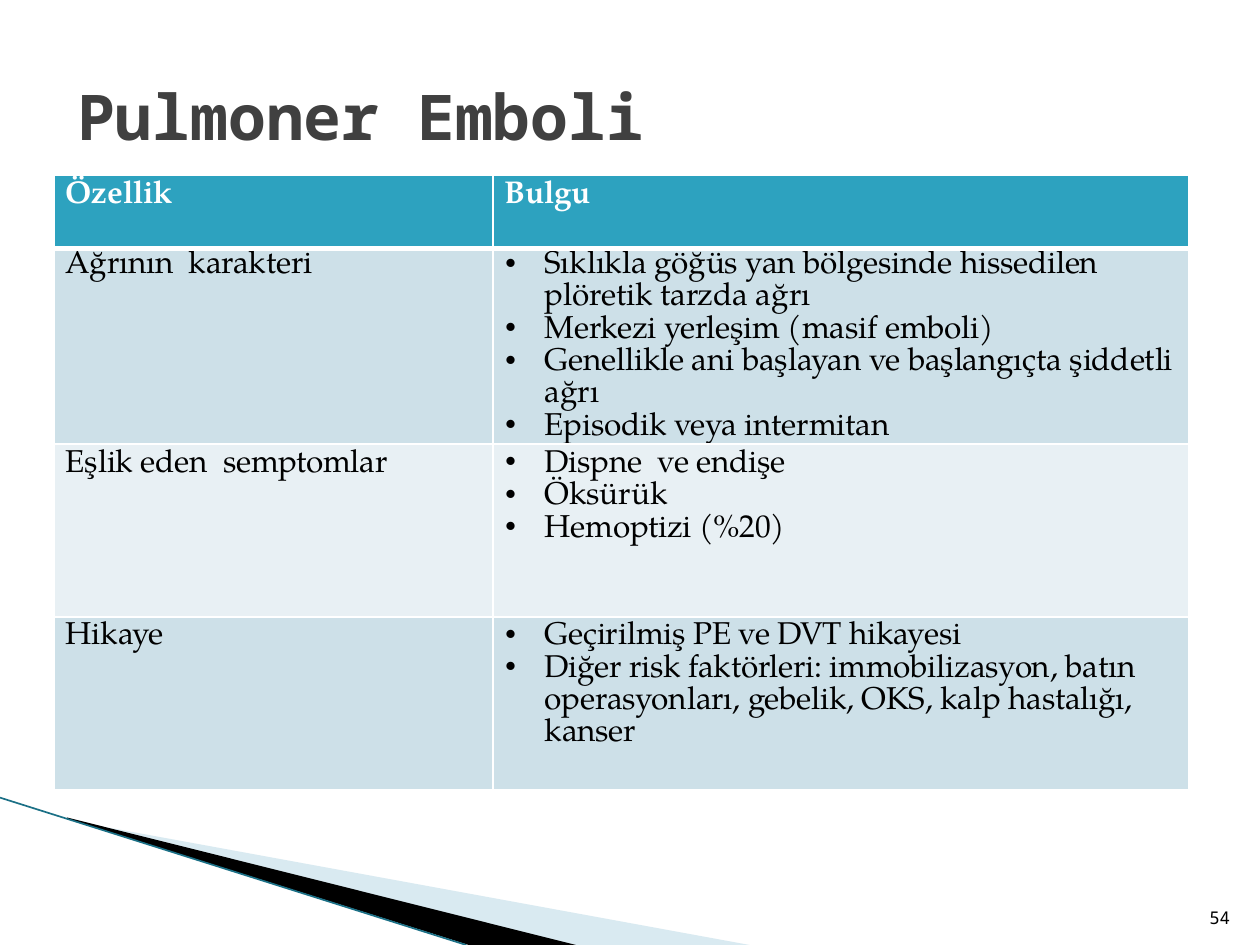
from lxml.etree import SubElement
from pptx import Presentation
from pptx.dml.color import RGBColor
from pptx.enum.shapes import MSO_CONNECTOR
from pptx.enum.text import MSO_ANCHOR, PP_ALIGN
from pptx.oxml.ns import qn
from pptx.util import Cm, Pt

SERIF = "TeX Gyre Pagella"
MONO = "Noto Sans Mono"
HEADER = ("Özellik", "Bulgu")
FINDINGS = [
    ("Ağrının  karakteri", [
        "Sıklıkla göğüs yan bölgesinde hissedilen plöretik tarzda ağrı",
        "Merkezi yerleşim (masif emboli)",
        "Genellikle ani başlayan ve başlangıçta şiddetli ağrı",
        "Episodik veya intermitan",
    ], 0.04),
    ("Eşlik eden  semptomlar", [
        "Dispne  ve endişe",
        "Öksürük",
        "Hemoptizi (%20)",
    ], 0.1),
    ("Hikaye", [
        "Geçirilmiş PE ve DVT hikayesi",
        "Diğer risk faktörleri: immobilizasyon, batın operasyonları, "
        "gebelik, OKS, kalp hastalığı, kanser",
    ], 0.1),
]


def rgb(color):
    return RGBColor.from_string(color)


def add_run(p, text, font=SERIF, size=18, color="000000", bold=False, spacing=None):
    r = p.add_run()
    r.text = text
    r.font.name = font
    r.font.size = Pt(size)
    r.font.bold = bold
    r.font.color.rgb = rgb(color)
    if spacing is not None:
        r._r.get_or_add_rPr().set("spc", str(spacing))


def add_wedge(s, points, color, alpha=None):
    start, *rest = [(Cm(x), Cm(y)) for x, y in points]
    builder = s.shapes.build_freeform(*start)
    builder.add_line_segments(rest, close=True)
    sp = builder.convert_to_shape()
    sp.shadow.inherit = False
    sp.line.fill.background()
    sp.fill.solid()
    sp.fill.fore_color.rgb = rgb(color)
    if alpha is not None:
        clr = sp._element.spPr.find(qn("a:solidFill"))[0]
        SubElement(clr, qn("a:alpha")).set("val", str(alpha * 1000))


def add_edge(s, x1, y1, x2, y2, color, width):
    line = s.shapes.add_connector(MSO_CONNECTOR.STRAIGHT, Cm(x1), Cm(y1), Cm(x2), Cm(y2))
    line.line.color.rgb = rgb(color)
    line.line.width = Pt(width)
    SubElement(line._element.spPr, qn("a:effectLst"))


def set_borders(cell, top=1, bottom=1):
    tcPr = cell._tc.get_or_add_tcPr()
    for side, width in (("L", 1), ("R", 1), ("T", top), ("B", bottom)):
        ln = SubElement(tcPr, qn(f"a:ln{side}"), w=str(Pt(width)))
        fill = SubElement(ln, qn("a:solidFill"))
        SubElement(fill, qn("a:srgbClr"), val="FFFFFF")


def fill_cell(cell, texts, fill, inset, bullets=False, color="000000", bold=False, **borders):
    set_borders(cell, **borders)
    cell.fill.solid()
    cell.fill.fore_color.rgb = rgb(fill)
    cell.margin_left = cell.margin_right = cell.margin_bottom = 0
    cell.margin_top = Cm(inset)
    tf = cell.text_frame
    for i, text in enumerate(texts):
        p = tf.add_paragraph() if i else tf.paragraphs[0]
        pPr = p._p.get_or_add_pPr()
        pPr.set("marL", str(Cm(1.04 if bullets else 0.23)))
        pPr.set("indent", str(Cm(-0.79 if bullets else 0)))
        if bullets:
            SubElement(pPr, qn("a:buChar"), char="•")
        p.line_spacing = 1.01
        if i:
            p.space_before = Pt(0.3)
        add_run(p, text, color=color, bold=bold, spacing=-10)


def add_findings(s):
    rows = len(FINDINGS) + 1
    table = s.shapes.add_table(rows, 2, Cm(1.1), Cm(3.54), Cm(22.86), Cm(11.91)).table
    for col, width in zip(table.columns, (8.84, 14.02)):
        col.width = Cm(width)
    for i, row in enumerate(table.rows):
        row.height = Cm(3.48 if i else 1.47)
    for col, text in enumerate(HEADER):
        fill_cell(table.cell(0, col), [text], "2DA2BF", 0.1,
                  color="FFFFFF", bold=True, bottom=3)
    for i, (feature, items, inset) in enumerate(FINDINGS, 1):
        fill = "CDE0E8" if i % 2 else "E8F0F4"
        top = 3 if i == 1 else 1
        fill_cell(table.cell(i, 0), [feature], fill, inset, top=top)
        fill_cell(table.cell(i, 1), items, fill, inset, bullets=True, top=top)


def set_title(s, text):
    title = s.shapes.title
    title.left, title.top, title.width, title.height = Cm(1.3), Cm(0.74), Cm(22.86), Cm(3.18)
    tf = title.text_frame
    tf.vertical_anchor = MSO_ANCHOR.MIDDLE
    p = tf.paragraphs[0]
    p.alignment = PP_ALIGN.LEFT
    add_run(p, text, font=MONO, size=36, color="404040", bold=True)


def add_number(s, text):
    tf = s.shapes.add_textbox(Cm(24.03), Cm(17.81), Cm(1.02), Cm(1.02)).text_frame
    tf.word_wrap = True
    tf.vertical_anchor = MSO_ANCHOR.BOTTOM
    p = tf.paragraphs[0]
    p.alignment = PP_ALIGN.RIGHT
    add_run(p, text, font=MONO, size=10)


def main():
    prs = Presentation()
    prs.slide_width, prs.slide_height = Cm(25.4), Cm(19.05)
    s = prs.slides.add_slide(prs.slide_layouts[5])
    add_wedge(s, [(1.4, 16.54), (15.11, 19.05), (11.58, 19.05), (1.4, 16.51)], "A0CBDC", 40)
    add_wedge(s, [(1.35, 16.48), (11.61, 19.05), (9.45, 19.05), (1.37, 16.51)], "000000")
    add_edge(s, 0, 16.08, 9.4, 19.05, "1B7086", 0.95)
    add_findings(s)
    add_number(s, "54")
    set_title(s, "Pulmoner Emboli")
    prs.save("out.pptx")


if __name__ == "__main__":
    main()
